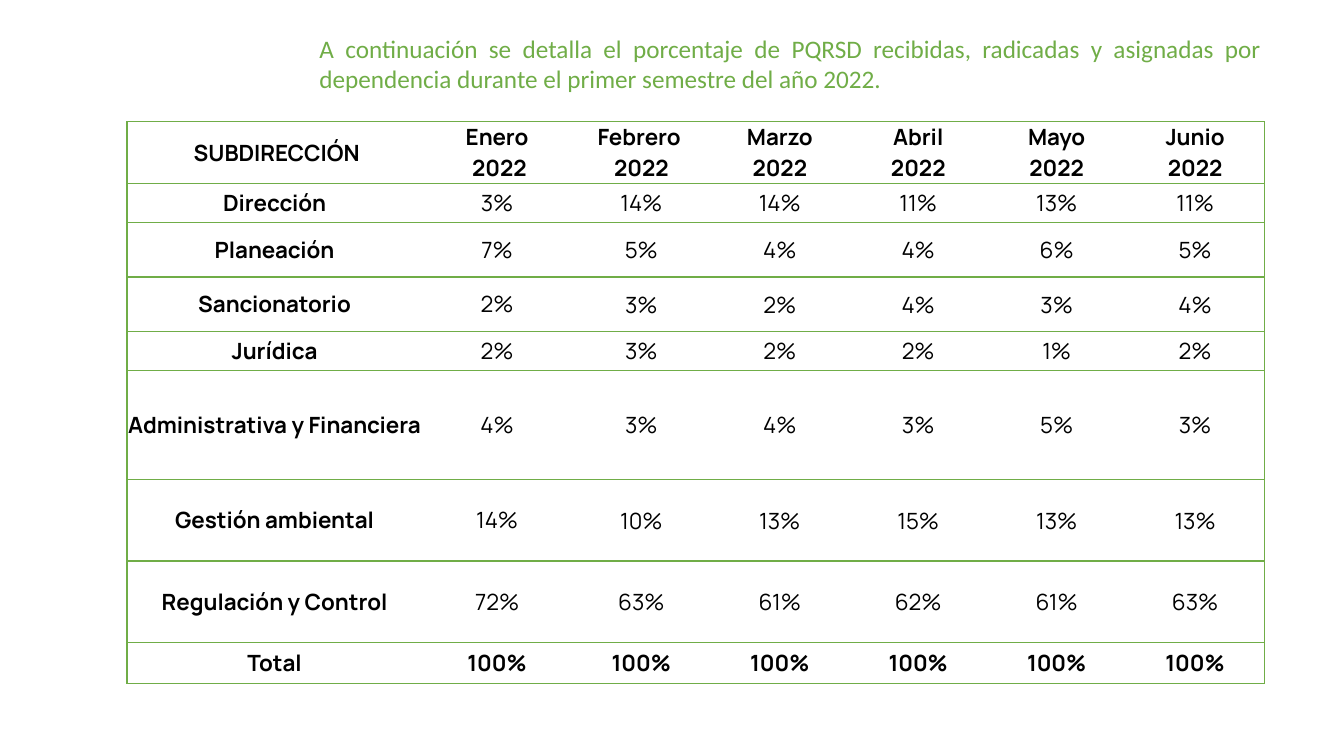
from lxml import etree
from pptx import Presentation
from pptx.dml.color import RGBColor
from pptx.enum import text
from pptx.oxml import ns
from pptx.util import Cm, Pt

GREEN = RGBColor(0x70, 0xAD, 0x47)
BLACK = RGBColor(0, 0, 0)
WHITE = RGBColor(0xFF, 0xFF, 0xFF)

INTRO = ("A continuación se detalla el porcentaje de PQRSD recibidas, radicadas y "
         "asignadas por dependencia durante el primer semestre del año 2022.")
HEADER = ["\u00a0SUBDIRECCIÓN", "Enero\n 2022", "Febrero \n2022", "Marzo\n2022",
          "Abril\n2022", "Mayo\n2022", "Junio\n2022"]
# Department, row height in cm, percentage for each month
DEPARTMENTS = [
    ("Dirección", 0.99, [3, 14, 14, 11, 13, 11]),
    ("Planeación", 1.37, [7, 5, 4, 4, 6, 5]),
    ("Sancionatorio", 1.37, [2, 3, 2, 4, 3, 4]),
    ("Jurídica", 0.99, [2, 3, 2, 2, 1, 2]),
    ("Administrativa y Financiera", 2.74, [4, 3, 4, 3, 5, 3]),
    ("Gestión ambiental", 2.06, [14, 10, 13, 15, 13, 13]),
    ("Regulación y Control", 2.06, [72, 63, 61, 62, 61, 63]),
    ("Total", 1.03, [100] * 6),
]
HEADER_HEIGHT = 1.55
COLUMN_SHARES = [7.44, 3.78] + [3.49] * 5


def format_paragraph(para, alignment, font_name, size, color, bold):
    para.alignment = alignment
    for span in para.runs:
        span.font.name = font_name
        span.font.size = Pt(size)
        span.font.bold = bold
        span.font.color.rgb = color


def set_borders(cell, green_sides):
    properties = cell._tc.get_or_add_tcPr()
    for side in "LRTB":
        line = etree.SubElement(properties, ns.qn(f"a:ln{side}"), w=str(Pt(1)))
        if side in green_sides:
            fill = etree.SubElement(line, ns.qn("a:solidFill"))
            etree.SubElement(fill, ns.qn("a:srgbClr"), val=str(GREEN))
        else:
            etree.SubElement(line, ns.qn("a:noFill"))


def add_intro(page, left, top, width, height):
    box = page.shapes.add_textbox(left, top, width, height)
    frame = box.text_frame
    frame.word_wrap = True
    frame.text = INTRO
    format_paragraph(frame.paragraphs[0], text.PP_ALIGN.JUSTIFY, "Calibri", 18, GREEN, False)


def fill_cell(cell, words, bold, inset, green_sides):
    set_borders(cell, green_sides)
    cell.fill.solid()
    cell.fill.fore_color.rgb = WHITE
    cell.vertical_anchor = text.MSO_ANCHOR.MIDDLE
    cell.margin_left = cell.margin_right = cell.margin_top = inset
    cell.margin_bottom = 0
    cell.text_frame.text = words
    for para in cell.text_frame.paragraphs:
        format_paragraph(para, text.PP_ALIGN.CENTER, "Manrope", 16, BLACK, bold)


def add_percentages(page, left, top, width, height):
    rows = [HEADER] + [[name] + [f"{value}%" for value in values]
                       for name, _, values in DEPARTMENTS]
    row_shares = [HEADER_HEIGHT] + [share for _, share, _ in DEPARTMENTS]
    last_row, last_column = len(rows) - 1, len(HEADER) - 1
    table = page.shapes.add_table(len(rows), len(HEADER), left, top, width, height).table
    table.first_row = table.horz_banding = False

    # Share the box out among columns and rows
    for column, share in zip(table.columns, COLUMN_SHARES):
        column.width = int(width * share / sum(COLUMN_SHARES))
    for row, share in zip(table.rows, row_shares):
        row.height = int(height * share / sum(row_shares))

    # Headings and totals are bold, monthly values are regular
    for i, row in enumerate(rows):
        for j, words in enumerate(row):
            bold = i in (0, last_row) or j == 0
            inset = Cm(0.02) if j > 1 and 0 < i < last_row else 0
            sides = "TB" + ("L" if j == 0 else "") + ("R" if j == last_column else "")
            fill_cell(table.cell(i, j), words, bold, inset, sides)


def main():
    deck = Presentation()
    deck.slide_width, deck.slide_height = Cm(33.87), Cm(19.05)
    page = deck.slides.add_slide(deck.slide_layouts[6])
    add_percentages(page, Cm(3.2), Cm(3.07), Cm(28.67), Cm(14.16))
    add_intro(page, Cm(7.8), Cm(0.71), Cm(24.23), Cm(1.8))
    deck.save("out.pptx")


if __name__ == "__main__":
    main()
